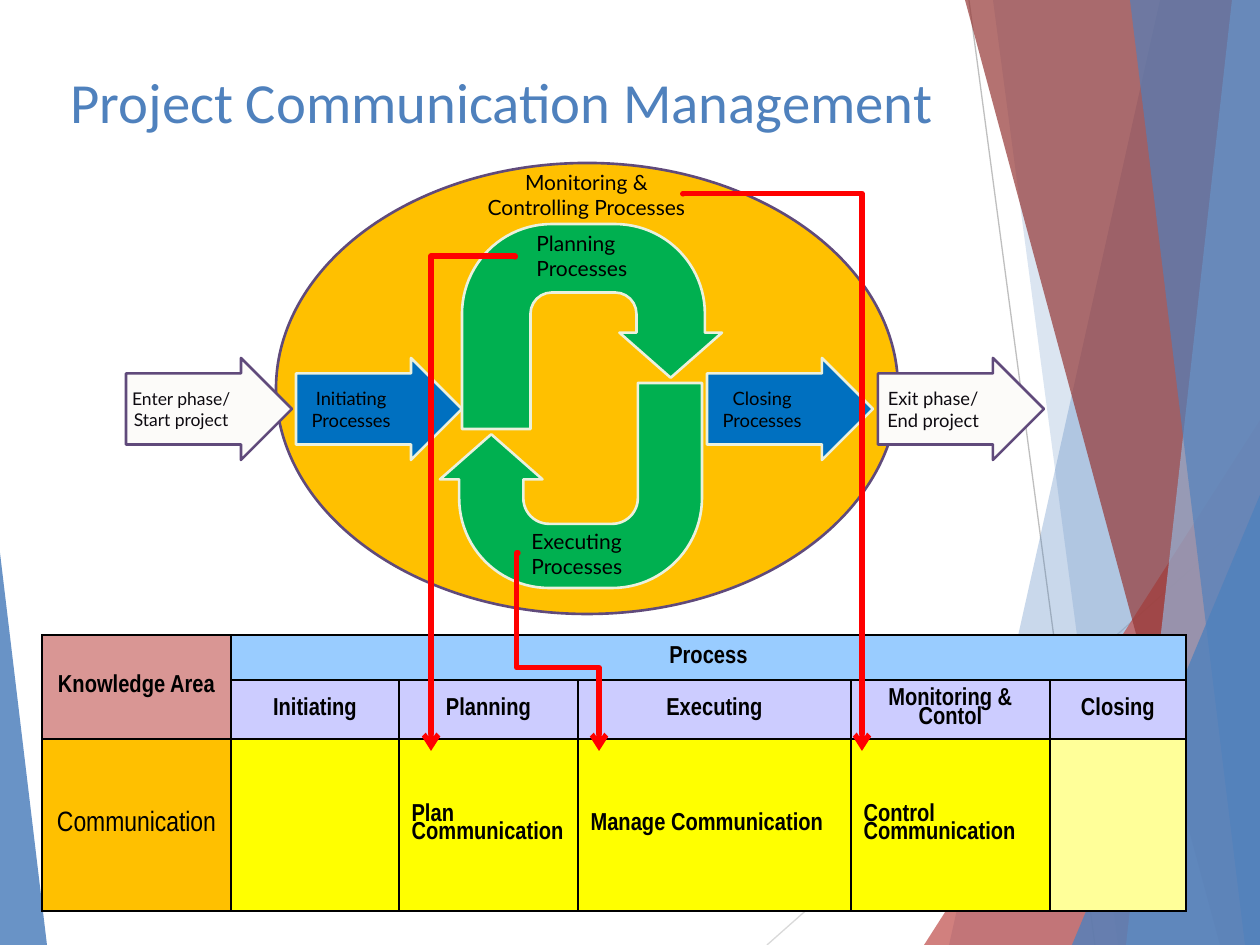
from lxml import etree
from pptx import Presentation
from pptx.dml.color import RGBColor
from pptx.enum.shapes import MSO_CONNECTOR, MSO_SHAPE
from pptx.enum.text import MSO_ANCHOR, MSO_AUTO_SIZE, PP_ALIGN
from pptx.oxml.ns import qn
from pptx.util import Pt

PX = 914400 / 126
STRAIGHT, ELBOW = MSO_CONNECTOR.STRAIGHT, MSO_CONNECTOR.ELBOW
TRIANGLE, OVAL = MSO_SHAPE.ISOSCELES_TRIANGLE, MSO_SHAPE.OVAL
RIGHT_ARROW, U_TURN = MSO_SHAPE.RIGHT_ARROW, MSO_SHAPE.U_TURN_ARROW
LEFT, CENTER = PP_ALIGN.LEFT, PP_ALIGN.CENTER
TOP, MIDDLE = MSO_ANCHOR.TOP, MSO_ANCHOR.MIDDLE

BLACK = RGBColor(0, 0, 0)
INK = RGBColor(0x0D, 0x0A, 0x10)
BLUE = RGBColor(0x4F, 0x81, 0xBD)
LIGHT_BLUE = RGBColor(0x95, 0xB3, 0xD7)
BRICK = RGBColor(0xC0, 0x50, 0x4D)
DARK_BRICK = RGBColor(0x95, 0x37, 0x35)
GREY = RGBColor(0xBF, 0xBF, 0xBF)
PALE_GREY = RGBColor(0xD9, 0xD9, 0xD9)
AMBER = RGBColor(0xFF, 0xC0, 0x00)
PURPLE = RGBColor(0x60, 0x4A, 0x7B)
OFF_WHITE = RGBColor(0xFC, 0xFB, 0xF9)
ARROW_BLUE = RGBColor(0x00, 0x70, 0xC0)
GREEN = RGBColor(0x00, 0xB0, 0x50)
PALE_GREEN = RGBColor(0xEB, 0xF1, 0xDE)
RED = RGBColor(0xFF, 0, 0)
ROSE = RGBColor(0xD9, 0x96, 0x94)
SKY = RGBColor(0x99, 0xCC, 0xFF)
LILAC = RGBColor(0xCC, 0xCC, 0xFF)
YELLOW = RGBColor(0xFF, 0xFF, 0x00)
PALE_YELLOW = RGBColor(0xFF, 0xFF, 0x99)

TITLE = "Project Communication Management"

# Backdrop: thin lines, then bands (corner points or triangle box), back to front
THIN_LINES = [((969, 0, 1095, 945), GREY), ((1260, 508, 767, 945), PALE_GREY)]
BANDS = [  # points, or (box, apex position); colour; opacity %
    ([(1160, 0), (1260, 0), (1260, 945), (949, 945)], BLUE, 30),
    ([(993, 0), (1260, 0), (1260, 945), (1118, 945)], BLUE, 20),
    (((924, 420, 336, 525), 1), BRICK, 72),
    ([(965, 0), (1260, 0), (1260, 945), (1220, 945)], DARK_BRICK, 70),
    ([(1232, 0), (1260, 0), (1260, 945), (1126, 945)], LIGHT_BLUE, 70),
    ([(1130, 0), (1260, 0), (1260, 945), (1245, 945)], BLUE, 65),
    (((1072, 495, 188, 450), 1), BLUE, 80),
    (((0, 553, 47, 392), 0), BLUE, 85),
]

# Table
COLUMNS = [189, 168, 179, 273, 199, 136]
ROWS = [45, 59, 172]
CELLS = [
    ["Knowledge Area", "Process", "", "", "", ""],
    ["", "Initiating", "Planning", "Executing", "Monitoring & Contol", "Closing"],
    ["Communication", "", "Plan Communication", "Manage Communication",
     "Control Communication", ""],
]
FILLS = [
    [ROSE] + [SKY] * 5,
    [ROSE] + [LILAC] * 5,
    [AMBER] + [YELLOW] * 4 + [PALE_YELLOW],
]

# Process diagram
STEPS = [  # left, lines, size, fill, outline, text colour
    (126, ["Enter phase/", "Start project"], 10, OFF_WHITE, PURPLE, INK),
    (878, ["Exit phase/", "End project"], 10.5, OFF_WHITE, PURPLE, INK),
    (296, ["Initiating", "Processes"], 10.5, ARROW_BLUE, PALE_GREEN, BLACK),
    (707, ["Closing", "Processes"], 10.5, ARROW_BLUE, PALE_GREEN, BLACK),
]
TURNS = [  # box, shaft thickness, rotation
    ((462, 224, 260, 205), 0.334, 0),
    ((440, 383, 262, 205), 0.313, 180),
]
LABELS = [
    ((524, 224, 135, 62), ["Planning", "Processes"], LEFT),
    ((519, 522, 135, 62), ["Executing", "Processes"], LEFT),
    ((462, 163, 249, 63), ["Monitoring &", "Controlling Processes"], CENTER),
]
LINKS = [  # box before rotation, preset, rotation, flips, bends
    ((226, 462, 494, 84), "bentConnector3", 90, [], [-200]),
    ((494, 383, 557, 179), "bentConnector3", 270, ["flipH"], [-100]),
    ((518, 553, 81, 198), "bentConnector4", 180, ["flipH", "flipV"], [-1800, 57900]),
]


def px(*values):
    return [round(v * PX) for v in values]


def paint(sp, fill, outline=None, opacity=100):
    sp.shadow.inherit = False
    sp.fill.solid()
    sp.fill.fore_color.rgb = fill
    if opacity < 100:
        color = sp._element.spPr.find(qn("a:solidFill"))[0]
        etree.SubElement(color, qn("a:alpha"), val=str(opacity * 1000))
    if outline is None:
        sp.line.fill.background()
    else:
        sp.line.color.rgb = outline
        sp.line.width = Pt(1.5)


def add_shape(kind, box, fill, outline=None, adjustments=(), opacity=100):
    sp = slide.shapes.add_shape(kind, *px(*box))
    for i, value in enumerate(adjustments):
        sp.adjustments[i] = value
    paint(sp, fill, outline, opacity)
    return sp


def add_line(kind, ends, color, width):
    line = slide.shapes.add_connector(kind, *px(*ends))
    line.line.color.rgb = color
    line.line.width = Pt(width)
    etree.SubElement(line._element.spPr, qn("a:effectLst"))
    return line


def write(tf, lines, size, color, align, anchor):
    tf.word_wrap = True
    tf.vertical_anchor = anchor
    tf.text = "\n".join(lines)
    for p in tf.paragraphs:
        p.alignment = align
        p.font.name, p.font.size = "Lato", Pt(size)
        p.font.color.rgb = color


def add_borders(cell):
    tcPr = cell._tc.get_or_add_tcPr()
    for i, side in enumerate(("a:lnL", "a:lnR", "a:lnT", "a:lnB")):
        ln = etree.Element(qn(side), w=str(Pt(1)))
        fill = etree.SubElement(ln, qn("a:solidFill"))
        etree.SubElement(fill, qn("a:srgbClr"), val=str(BLACK))
        tcPr.insert(i, ln)


prs = Presentation()
prs.slide_width, prs.slide_height = px(1260, 945)
slide = prs.slides.add_slide(prs.slide_layouts[5])

# Backdrop
for ends, color in THIN_LINES:
    add_line(STRAIGHT, ends, color, 0.75)
for outline, color, opacity in BANDS:
    if isinstance(outline, list):
        builder = slide.shapes.build_freeform(*outline[0], scale=PX)
        builder.add_line_segments(outline[1:])
        paint(builder.convert_to_shape(), color, opacity=opacity)
    else:
        box, apex = outline
        add_shape(TRIANGLE, box, color, adjustments=[apex], opacity=opacity)

# Title
title = slide.shapes.title
title.left, title.top, title.width, title.height = px(58, 60, 1050, 63)
tf = title.text_frame
tf.text = TITLE
tf.auto_size = MSO_AUTO_SIZE.NONE
tf.vertical_anchor = TOP
p = tf.paragraphs[0]
p.alignment = LEFT
p.font.name, p.font.size = "Calibri", Pt(32.4)
p.font.color.rgb = BLUE

# Table
frame = slide.shapes.add_table(len(ROWS), len(COLUMNS),
                               *px(42, 635, sum(COLUMNS), sum(ROWS)))
table = frame.table
table.first_row = table.horz_banding = False
for column, width in zip(table.columns, px(*COLUMNS)):
    column.width = width
for row, height in zip(table.rows, px(*ROWS)):
    row.height = height
for r, texts in enumerate(CELLS):
    for c, text in enumerate(texts):
        cell = table.cell(r, c)
        cell.fill.solid()
        cell.fill.fore_color.rgb = FILLS[r][c]
        add_borders(cell)
        cell.vertical_anchor = MIDDLE
        cell.text = text
        area = r == 2 and c == 0
        p = cell.text_frame.paragraphs[0]
        p.alignment = LEFT if r == 2 and c else CENTER
        p.line_spacing = 0.8
        p.font.name, p.font.size = "Arial Narrow", Pt(16 if area else 14)
        p.font.bold = not area
        p.font.color.rgb = BLACK
table.cell(0, 0).merge(table.cell(1, 0))
table.cell(0, 1).merge(table.cell(0, 5))

# Process diagram
add_shape(OVAL, (276, 163, 622, 451), AMBER, PURPLE)
for left, lines, size, fill, outline, color in STEPS:
    sp = add_shape(RIGHT_ARROW, (left, 358, 166, 102), fill, outline, (0.697, 0.5))
    tf = sp.text_frame
    tf.margin_left, tf.margin_right = px(0, 20)
    write(tf, lines, size, color, CENTER, MIDDLE)
for box, shaft, rotation in TURNS:
    sp = add_shape(U_TURN, box, GREEN, PALE_GREEN, (shaft, 0.25, 0.22, 0.438, 0.75))
    sp.rotation = rotation
for box, lines, align in LABELS:
    write(slide.shapes.add_textbox(*px(*box)).text_frame, lines, 12, BLACK, align, TOP)

# Red links from processes to table columns
for (x, y, w, h), preset, rotation, flips, bends in LINKS:
    link = add_line(ELBOW, (x, y, x + w, y + h), RED, 3)
    spPr = link._element.spPr
    xfrm = spPr.find(qn("a:xfrm"))
    xfrm.set("rot", str(rotation * 60000))
    for flip in flips:
        xfrm.set(flip, "1")
    geometry = spPr.find(qn("a:prstGeom"))
    geometry.set("prst", preset)
    guides = geometry.find(qn("a:avLst"))
    for i, bend in enumerate(bends, 1):
        etree.SubElement(guides, qn("a:gd"), name=f"adj{i}", fmla=f"val {bend}")
    ln = spPr.find(qn("a:ln"))
    ln.set("cap", "rnd")
    etree.SubElement(ln, qn("a:round"))
    etree.SubElement(ln, qn("a:tailEnd"), type="arrow")

prs.save("out.pptx")
